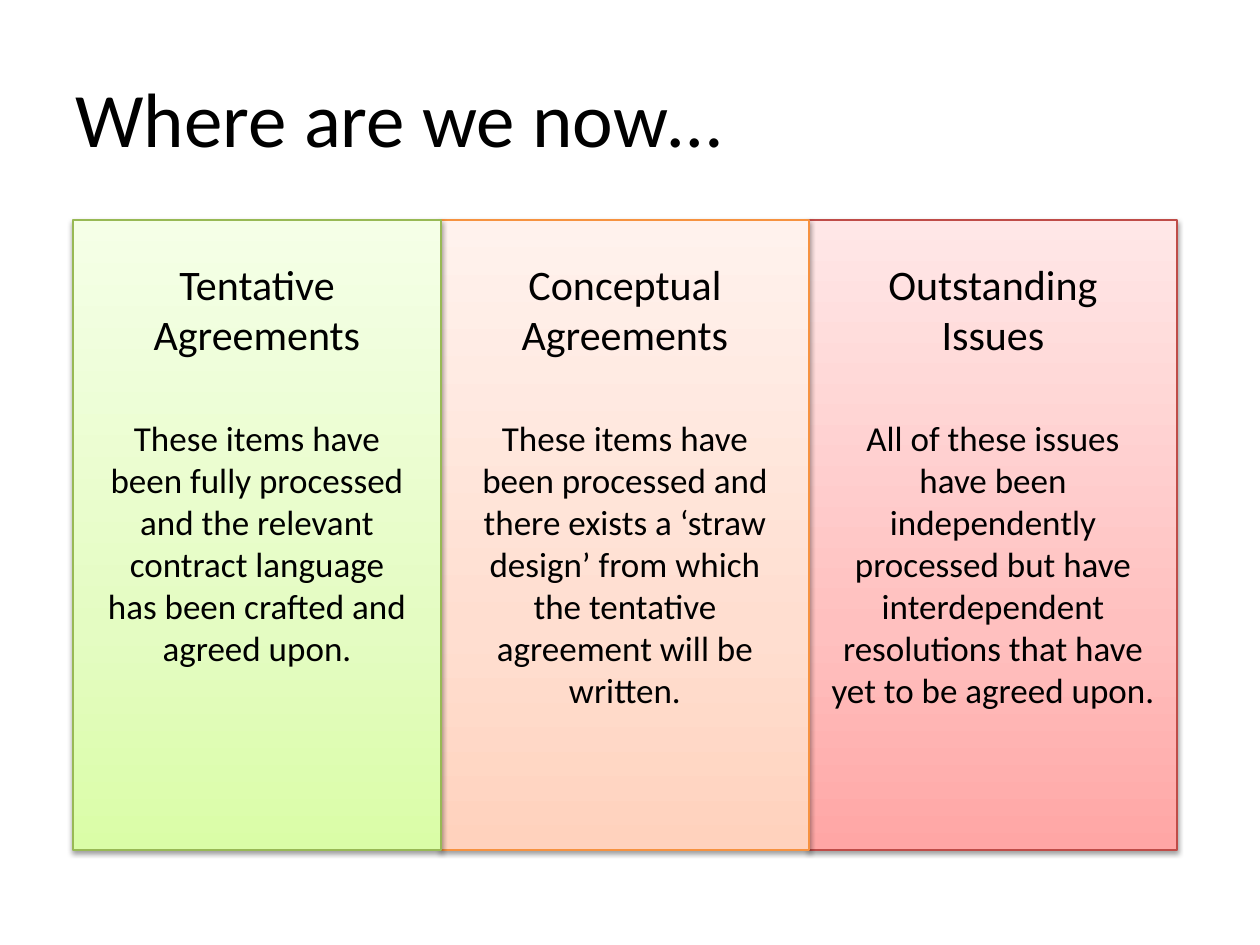
"""Build a slide that sorts negotiation items into three status columns."""
from copy import deepcopy

from pptx import Presentation
from pptx import util as u
from pptx.dml.color import RGBColor
from pptx.enum import shapes, text
from pptx.oxml import parse_xml
from pptx.oxml.ns import nsdecls, qn

PX = u.Inches(1) / 126
THEME = {
    "font": "Calibri",
    "ink": "000000",
    "title": 44,
    "heading": 24,
    "body": 20,
    "outline": 0.75,
    "green": ("98B955", ("DAFDA7", "E4FCC2", "F5FFE7")),
    "orange": ("F69240", ("FFD2BD", "FFDED0", "FFF2ED")),
    "red": ("BF4C48", ("FFA6A5", "FFC0BF", "FFE7E7")),
}
STOPS = (0, 0.35, 1)
SHADOW = (
    f'<a:outerShdw {nsdecls("a")} blurRad="40000" dist="20000" dir="5400000" rotWithShape="0">'
    '<a:srgbClr val="000000"><a:alpha val="38000"/></a:srgbClr></a:outerShdw>'
)


def px(*lengths):
    return [u.Emu(round(length * PX)) for length in lengths]


def add_text(words, *, box, size, align=text.PP_ALIGN.CENTER, anchor=text.MSO_ANCHOR.TOP):
    frame = slide.shapes.add_textbox(*px(*box)).text_frame
    frame.word_wrap = True
    frame.vertical_anchor = anchor
    frame.text = words
    for paragraph in frame.paragraphs:
        paragraph.alignment = align
        paragraph.font.name = THEME["font"]
        paragraph.font.size = u.Pt(size)
        paragraph.font.color.rgb = RGBColor.from_string(THEME["ink"])


deck = Presentation()
deck.slide_width, deck.slide_height = px(1260, 945)
slide = deck.slides.add_slide(deck.slide_layouts[6])

LEFT, TOP, WIDTH, HEIGHT = 73, 220, 368, 630
HEADING_INSET = 63
statuses = [
    ("green", "Tentative Agreements", 21,
     "These items have been fully processed and the relevant contract language "
     "has been crafted and agreed upon."),
    ("orange", "Conceptual\nAgreements", 21,
     "These items have been processed and there exists a ‘straw design’ from which "
     "the tentative agreement will be written."),
    ("red", "Outstanding\nIssues", 10,
     "All of these issues have been independently processed but have interdependent "
     "resolutions that have yet to be agreed upon."),
]
columns = [(LEFT + i * WIDTH, *status) for i, status in enumerate(statuses)]

for left, hue, *_ in reversed(columns):
    outline, shades = THEME[hue]
    panel = slide.shapes.add_shape(shapes.MSO_SHAPE.RECTANGLE, *px(left, TOP, WIDTH, HEIGHT))
    panel.line.color.rgb = RGBColor.from_string(outline)
    panel.line.width = u.Pt(THEME["outline"])
    panel.fill.gradient()
    panel.fill.gradient_angle = 90
    properties = panel._element.spPr
    stop_list = properties.find(".//" + qn("a:gsLst"))
    stop_list.insert(1, deepcopy(stop_list[0]))
    for stop, position, shade in zip(panel.fill.gradient_stops, STOPS, shades):
        stop.position = position
        stop.color.rgb = RGBColor.from_string(shade)
    panel.shadow.inherit = False
    properties.find(qn("a:effectLst")).append(parse_xml(SHADOW))

add_text("Where are we now…", box=(63, 38, 1134, 158), size=THEME["title"],
         align=text.PP_ALIGN.LEFT, anchor=text.MSO_ANCHOR.MIDDLE)
for left, _, heading, _, _ in columns:
    add_text(heading, box=(left + HEADING_INSET, 252, WIDTH - 2 * HEADING_INSET, 115),
             size=THEME["heading"])
for left, _, _, inset, description in columns:
    add_text(description, box=(left + inset, 410, WIDTH - 2 * inset, 310), size=THEME["body"])

deck.save("out.pptx")
